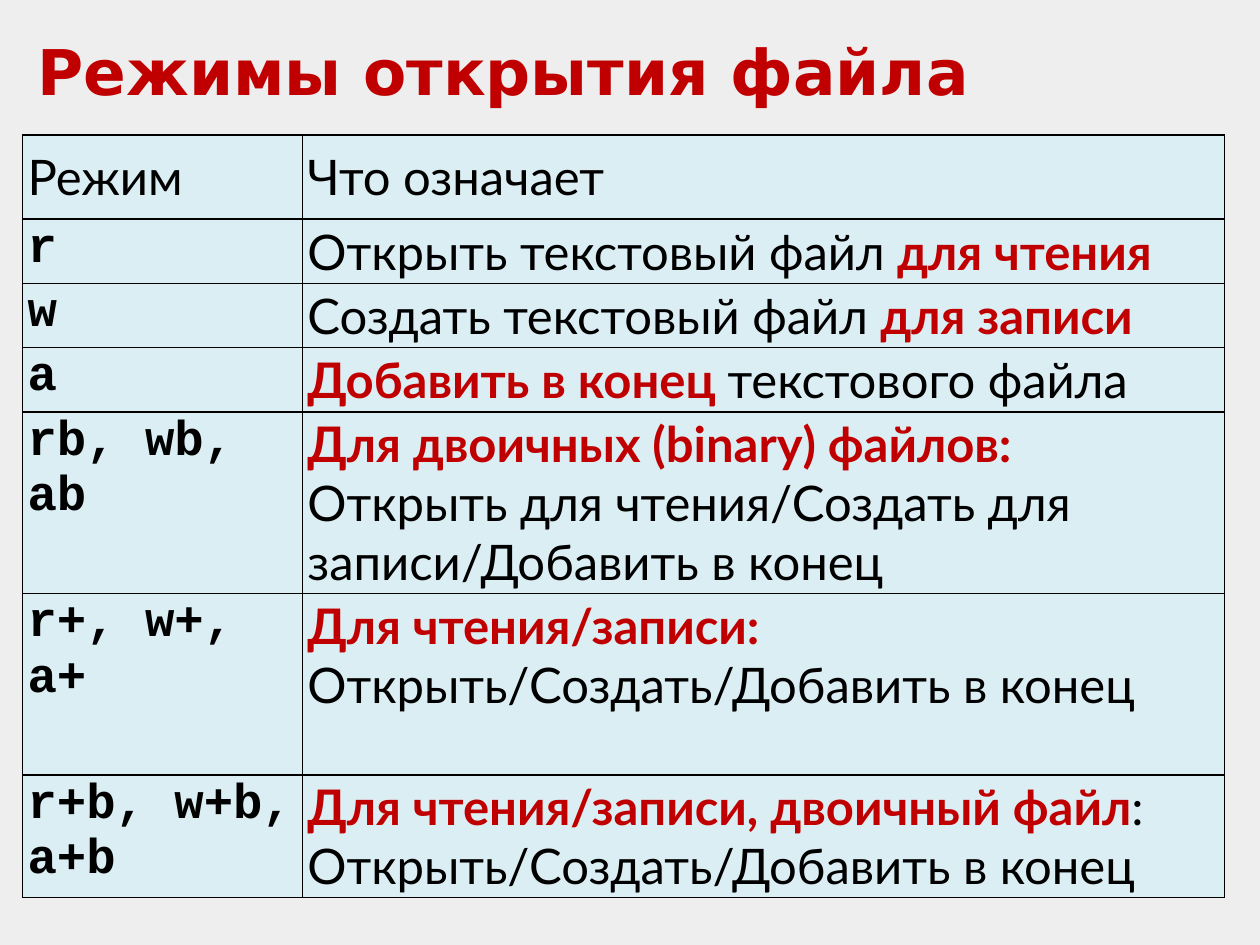
import pptx
import pptx.util
import pptx.dml.color
import pptx.enum.text
import pptx.oxml
import pptx.oxml.ns
from pptx.util import Inches

BLACK, RED, PALE_BLUE = "000000", "C00000", "DBEEF4"
COLUMN_WIDTHS = [2.22, 7.32]
HEADER = ["Режим", "Что означает"]
HEADER_HEIGHT = 0.67

# Mode, row height, description as (text, emphasised) pieces
MODES = [
    ("r", 0.51, [("Открыть текстовый файл ", False), ("для чтения", True)]),
    ("w", 0.51, [("Создать текстовый файл ", False), ("для записи", True)]),
    ("a", 0.51, [("Добавить в конец ", True), ("текстового файла", False)]),
    ("rb, wb, ab", 1.44, [
        ("Для двоичных (binary) файлов: ", True),
        ("Открыть для чтения/Создать для записи/Добавить в конец", False)]),
    ("r+, w+, a+", 1.44, [
        ("Для чтения/записи:", True),
        (" Открыть/Создать/Добавить в конец", False)]),
    ("r+b, w+b, a+b", 0.97, [
        ("Для чтения/записи, двоичный файл", True),
        (": Открыть/Создать/Добавить в конец", False)]),
]


def color(value):
    return pptx.dml.color.RGBColor.from_string(value)


def style_font(font, name, size, bold=False, fill=BLACK):
    font.name = name
    font.size = pptx.util.Pt(size)
    font.bold = bold
    font.color.rgb = color(fill)


def add_borders(cell):
    properties = cell._tc.get_or_add_tcPr()
    namespace = pptx.oxml.ns.nsdecls("a")
    for position, side in enumerate(("lnL", "lnR", "lnT", "lnB")):
        border = pptx.oxml.parse_xml(
            f'<a:{side} {namespace} w="12700"><a:solidFill>'
            f'<a:srgbClr val="{BLACK}"/></a:solidFill></a:{side}>')
        properties.insert(position, border)


def fill_cell(cell, pieces, font_name="Lato", bold=False):
    cell.margin_left = cell.margin_right = Inches(0.04)
    cell.margin_top = cell.margin_bottom = Inches(0.02)
    cell.fill.solid()
    cell.fill.fore_color.rgb = color(PALE_BLUE)
    add_borders(cell)
    paragraph = cell.text_frame.paragraphs[0]
    style_font(paragraph.font, font_name, 28, bold)
    for text, emphasised in pieces:
        run = paragraph.add_run()
        run.text = text
        style_font(run.font, font_name, 28, bold or emphasised,
                   RED if emphasised else BLACK)


def add_title(slide, text):
    title = slide.shapes.add_textbox(
        Inches(0.2), Inches(0.21), Inches(9.53), Inches(0.71))
    title.text_frame.word_wrap = True
    title.text_frame.auto_size = pptx.enum.text.MSO_AUTO_SIZE.SHAPE_TO_FIT_TEXT
    paragraph = title.text_frame.paragraphs[0]
    paragraph.text = text
    style_font(paragraph.font, "DejaVu Sans", 36, True, RED)


def add_mode_table(slide):
    heights = [HEADER_HEIGHT] + [height for _, height, _ in MODES]
    table = slide.shapes.add_table(
        len(heights), len(COLUMN_WIDTHS), Inches(0.18), Inches(1.07),
        Inches(sum(COLUMN_WIDTHS)), Inches(sum(heights))).table
    for column, width in zip(table.columns, COLUMN_WIDTHS):
        column.width = Inches(width)
    for row, height in zip(table.rows, heights):
        row.height = Inches(height)

    # Header row
    for index, heading in enumerate(HEADER):
        cell = table.cell(0, index)
        fill_cell(cell, [(heading, False)])
        cell.vertical_anchor = pptx.enum.text.MSO_ANCHOR.MIDDLE

    # One row per mode
    for index, (mode, _, description) in enumerate(MODES, start=1):
        fill_cell(table.cell(index, 0), [(mode, False)], "Courier New", True)
        fill_cell(table.cell(index, 1), description)


def main():
    presentation = pptx.Presentation()
    presentation.slide_width = Inches(10)
    presentation.slide_height = Inches(7.5)
    slide = presentation.slides.add_slide(presentation.slide_layouts[6])
    slide.background.fill.solid()
    slide.background.fill.fore_color.rgb = color("EEEEEE")
    add_mode_table(slide)
    add_title(slide, "Режимы открытия файла")
    presentation.save("out.pptx")


if __name__ == "__main__":
    main()
